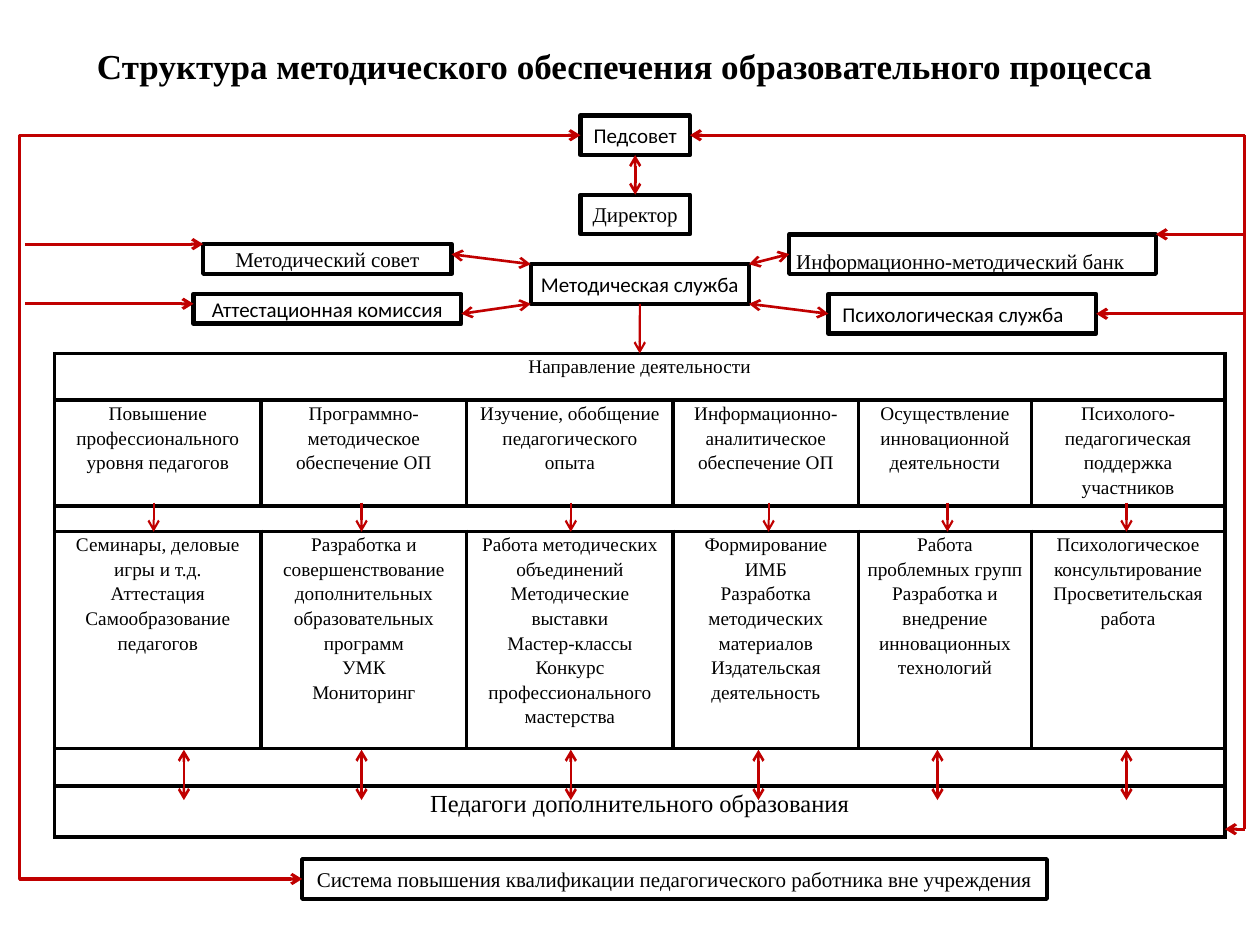
from lxml import etree
from pptx import Presentation
from pptx.dml.color import RGBColor
from pptx.enum.shapes import MSO_CONNECTOR, MSO_SHAPE
from pptx.enum.text import MSO_ANCHOR, PP_ALIGN
from pptx.oxml.ns import qn
from pptx.util import Pt

ELBOW, STRAIGHT = MSO_CONNECTOR.ELBOW, MSO_CONNECTOR.STRAIGHT
RECTANGLE = MSO_SHAPE.RECTANGLE
MIDDLE, BOTTOM, TOP = MSO_ANCHOR.MIDDLE, MSO_ANCHOR.BOTTOM, MSO_ANCHOR.TOP
CENTER, LEFT = PP_ALIGN.CENTER, PP_ALIGN.LEFT
COLORS = {"ink": "000000", "arrow": "C00000"}
SERIF, SANS = "Times New Roman", "Calibri"

TITLE = "Структура методического обеспечения образовательного процесса"
BOXES = {
    "council": ("Педсовет", (331.7, 66, 62.6, 22.6), SANS, CENTER, MIDDLE, 0),
    "director": ("Директор", (331.7, 111.3, 62.6, 22.6), SERIF, CENTER, MIDDLE, 0),
    "method_council": ("Методический совет", (116.1, 139.5, 142, 17), SERIF, CENTER, MIDDLE, 0),
    "bank": ("Информационно-методический банк", (451, 133.9, 209.5, 22.6), SERIF, LEFT, BOTTOM, 4),
    "attestation": ("Аттестационная комиссия", (110.6, 168, 153, 17), SANS, CENTER, MIDDLE, 0),
    "psychology": ("Психологическая служба", (473.4, 168, 153, 22.6), SANS, LEFT, MIDDLE, 8),
    "service": ("Методическая служба", (303.3, 151, 124.7, 22.6), SANS, CENTER, MIDDLE, 0),
    "training": ("Система повышения квалификации педагогического работника вне учреждения",
                 (172.7, 491, 425.5, 22.6), SERIF, CENTER, MIDDLE, 0),
}
TABLE_LEFT, TABLE_TOP = 31.2, 202
COLUMN_WIDTHS = [118, 117.5, 118, 106, 98.7, 110.6]
ROWS = [
    (26.7, 11, ["Направление деятельности"]),
    (60.5, 11, [
        "Повышение профессионального уровня педагогов",
        "Программно-методическое обеспечение ОП",
        "Изучение, обобщение педагогического опыта",
        "Информационно-аналитическое обеспечение ОП",
        "Осуществление инновационной деятельности",
        "Психолого-педагогическая поддержка участников",
    ]),
    (14.4, 8, [""]),
    (124, 11, [
        "Семинары, деловые игры и т.д.\nАттестация\nСамообразование педагогов",
        "Разработка и совершенствование дополнительных образовательных программ\nУМК\nМониторинг",
        "Работа методических объединений\nМетодические выставки\nМастер-классы\n"
        "Конкурс профессионального мастерства",
        "Формирование ИМБ\nРазработка методических материалов\nИздательская деятельность",
        "Работа проблемных групп\nРазработка и внедрение инновационных технологий",
        "Психологическое консультирование\nПросветительская работа",
    ]),
    (21.7, 8, [""]),
    (29, 14, ["Педагоги дополнительного образования"]),
]

LEFT_RAIL, RIGHT_RAIL, RAIL_TOP, RAIL_BOTTOM = 14.4, 711.4, 77.3, 473.8
TABLE_RIGHT = TABLE_LEFT + sum(COLUMN_WIDTHS)
DOWN_ARROWS = [87.8, 206.6, 326.2, 439.2, 541.4, 643.7]
DOUBLE_ARROWS = [105.1, 206.6, 326.2, 433.4, 535.7, 643.7]
BOTH, END, NONE = ("headEnd", "tailEnd"), ("tailEnd",), ()
LINKS = [
    (1.5, BOTH, [
        (("council", 2), ("director", 0)),
        ((258, 145.3), (303.3, 151)),
        (("bank", 1), (428, 151)),
        ((303.3, 173.6), (263.6, 179.3)),
        ((428, 173.6), ("psychology", 1)),
    ] + [((x, 428.4), (x, 457.2)) for x in DOUBLE_ARROWS]),
    (1.25, END, [((x, 287.2), (x, 303.9)) for x in DOWN_ARROWS]
     + [(("service", 2), (365.6, TABLE_TOP))]),
    (1.75, NONE, [((RIGHT_RAIL, RAIL_TOP), (RIGHT_RAIL, RAIL_BOTTOM))]),
    (1.75, END, [
        ((RIGHT_RAIL, RAIL_BOTTOM), (TABLE_RIGHT, RAIL_BOTTOM)),
        ((RIGHT_RAIL, RAIL_TOP), ("council", 3)),
        ((LEFT_RAIL, 139.5), (116.1, 139.5)),
        ((LEFT_RAIL, 173.6), (110.6, 173.6)),
        ((RIGHT_RAIL, 133.9), (660.5, 133.9)),
        ((RIGHT_RAIL, 179.3), ("psychology", 3)),
    ]),
]
ELBOW_BEND = -101600


def apply(target, values):
    for name, value in values.items():
        setattr(target, name, value)


def write(frame, text, size, font, align, spacing=1.0, bold=False):
    frame.text = text
    for paragraph in frame.paragraphs:
        apply(paragraph, {"alignment": align, "line_spacing": spacing})
        for run in paragraph.runs:
            apply(run.font, {"size": Pt(size), "name": font, "bold": bold})
            run.font.color.rgb = RGBColor.from_string(COLORS["ink"])
        if not text:
            etree.SubElement(paragraph._p, qn("a:endParaRPr"), sz=str(size * 100))


def add_box(slide, text, bounds, font, align, anchor, inset):
    shape = slide.shapes.add_shape(RECTANGLE, *map(Pt, bounds))
    shape.shadow.inherit = False
    shape.fill.background()
    shape.line.color.rgb = RGBColor.from_string(COLORS["ink"])
    shape.line.width = Pt(2.5)
    apply(shape.text_frame, {
        "word_wrap": False, "vertical_anchor": anchor, "margin_left": Pt(inset),
        "margin_right": 0, "margin_top": 0, "margin_bottom": 0})
    write(shape.text_frame, text, 12, font, align)
    return shape


def add_border(cell):
    properties = cell._tc.get_or_add_tcPr()
    for index, side in enumerate(("lnL", "lnR", "lnT", "lnB")):
        line = etree.Element(qn("a:" + side), w=str(Pt(2.25)))
        fill = etree.SubElement(line, qn("a:solidFill"))
        etree.SubElement(fill, qn("a:srgbClr"), val=COLORS["ink"])
        properties.insert(index, line)


def add_activity_table(slide):
    height = sum(row[0] for row in ROWS)
    bounds = (TABLE_LEFT, TABLE_TOP, sum(COLUMN_WIDTHS), height)
    table = slide.shapes.add_table(len(ROWS), len(COLUMN_WIDTHS), *map(Pt, bounds)).table
    apply(table, {"first_row": False, "horz_banding": False})
    for column, width in zip(table.columns, COLUMN_WIDTHS):
        column.width = Pt(width)
    for index, (row_height, size, texts) in enumerate(ROWS):
        row = table.rows[index]
        row.height = Pt(row_height)
        for cell in row.cells:
            apply(cell, {"margin_left": Pt(5), "margin_right": Pt(5), "margin_top": 0,
                         "margin_bottom": 0, "vertical_anchor": TOP})
            cell.fill.background()
            add_border(cell)
        if len(texts) == 1:
            table.cell(index, 0).merge(table.cell(index, len(COLUMN_WIDTHS) - 1))
        for cell, text in zip(row.cells, texts):
            write(cell.text_frame, text, size, SERIF, CENTER, 1.15 if text else 1.0)


def add_link(slide, boxes, kind, start, end, width, arrows):
    points = [(0, 0) if point[0] in boxes else point for point in (start, end)]
    connector = slide.shapes.add_connector(kind, *(Pt(value) for point in points for value in point))
    for point, connect in ((start, connector.begin_connect), (end, connector.end_connect)):
        if point[0] in boxes:
            connect(boxes[point[0]], point[1])
    connector.line.color.rgb = RGBColor.from_string(COLORS["arrow"])
    connector.line.width = Pt(width)
    for arrow in arrows:
        etree.SubElement(connector.line._get_or_add_ln(), qn("a:" + arrow), type="arrow")
    etree.SubElement(connector._element.spPr, qn("a:effectLst"))
    return connector


def main():
    presentation = Presentation()
    apply(presentation, {"slide_width": Pt(720), "slide_height": Pt(540)})
    slide = presentation.slides.add_slide(presentation.slide_layouts[5])
    title = slide.shapes.title
    apply(title, {"left": Pt(42.5), "top": Pt(20), "width": Pt(629), "height": Pt(35)})
    apply(title.text_frame, {"word_wrap": True, "vertical_anchor": MIDDLE})
    write(title.text_frame, TITLE, 20, SERIF, CENTER, bold=True)

    add_activity_table(slide)
    boxes = {name: add_box(slide, *values) for name, values in BOXES.items()}
    for width, arrows, pairs in LINKS:
        for start, end in pairs:
            add_link(slide, boxes, STRAIGHT, start, end, width, arrows)
    elbow = add_link(slide, boxes, ELBOW, ("training", 1), ("council", 1), 1.75, BOTH)
    guides = elbow._element.spPr.find(qn("a:prstGeom")).find(qn("a:avLst"))
    etree.SubElement(guides, qn("a:gd"), name="adj1", fmla=f"val {ELBOW_BEND}")
    presentation.save("out.pptx")


if __name__ == "__main__":
    main()
